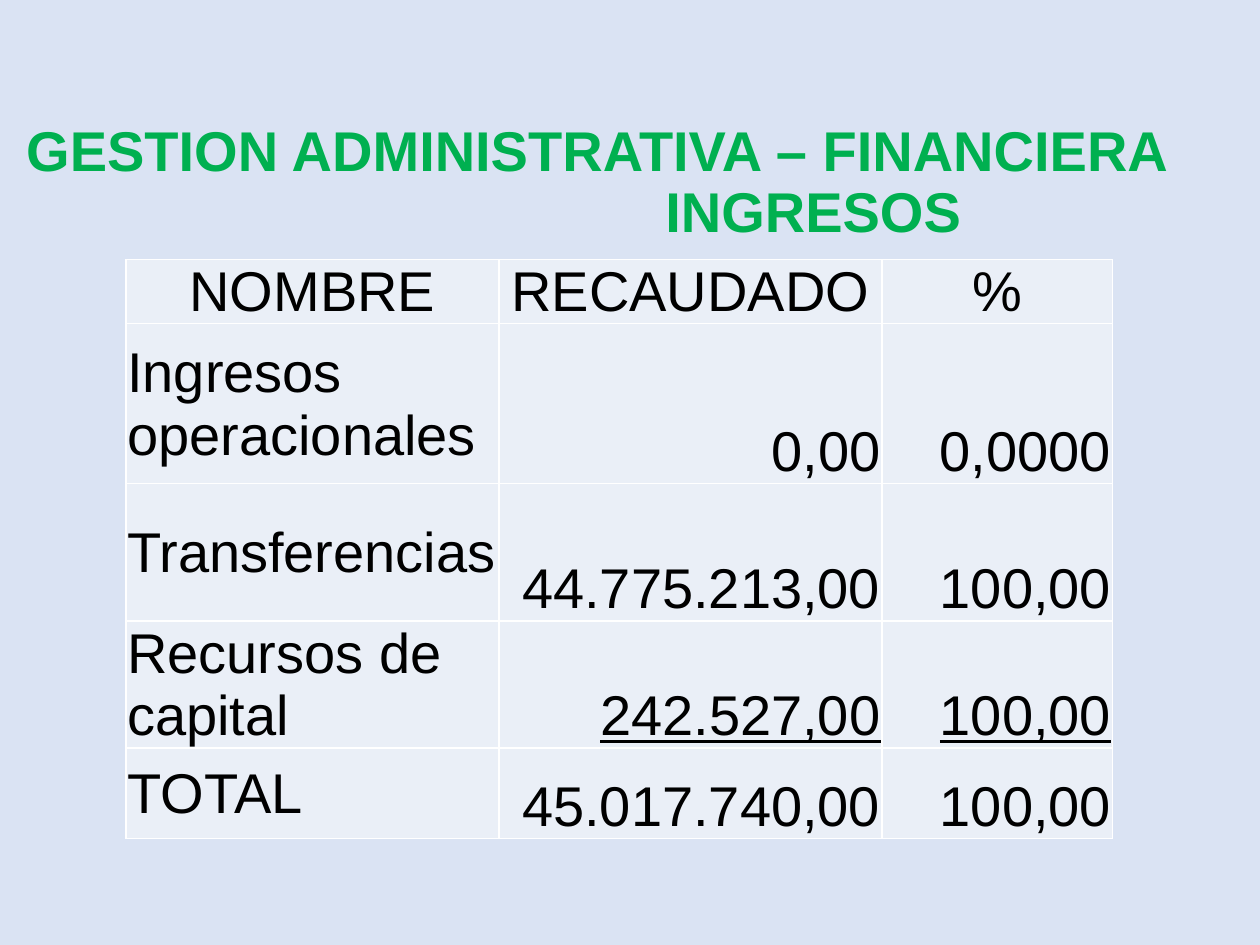
from typing import NamedTuple

from lxml import etree
from pptx import Presentation
from pptx import util as u
from pptx.dml.color import RGBColor
from pptx.enum import text
from pptx.oxml import ns

FONT, SIZE = "Arial", 32
BACKGROUND, GREEN, BLACK = "DAE3F3", "00B050", "000000"
CELL_FILL, BORDER = "EAEFF7", "FFFFFF"
LEFT, CENTER, RIGHT = text.PP_ALIGN.LEFT, text.PP_ALIGN.CENTER, text.PP_ALIGN.RIGHT


class Income(NamedTuple):
    name: str
    collected: str
    percent: str
    height: float
    header: bool = False
    underlined: bool = False


INCOMES = [
    Income("NOMBRE", "RECAUDADO", "%", 0.42, header=True),
    Income("Ingresos operacionales", "0,00", "0,0000", 1.27),
    Income("Transferencias", "44.775.213,00", "100,00", 1.09),
    Income("Recursos de capital", "242.527,00", "100,00", 0.92, underlined=True),
    Income("TOTAL", "45.017.740,00", "100,00", 0.72),
]
COLUMN_WIDTHS = [2.96, 3.04, 1.83]


def paint(fill_or_font_color, color: str) -> None:
    fill_or_font_color.rgb = RGBColor.from_string(color)


def format_runs(paragraph, color: str, bold: bool = False, underline: bool = False) -> None:
    for run in paragraph.runs:
        run.font.name, run.font.size = FONT, u.Pt(SIZE)
        run.font.bold, run.font.underline = bold, underline
        paint(run.font.color, color)


def add_borders(cell, color: str) -> None:
    properties = cell._tc.get_or_add_tcPr()
    for index, side in enumerate(("a:lnL", "a:lnR", "a:lnT", "a:lnB")):
        line = etree.Element(ns.qn(side), w=str(u.Pt(1)))
        solid = etree.SubElement(line, ns.qn("a:solidFill"))
        etree.SubElement(solid, ns.qn("a:srgbClr"), val=color)
        properties.insert(index, line)


def fill_cell(cell, words: str, column: int, income: Income) -> None:
    cell.text_frame.text = words
    cell.margin_left = cell.margin_right = cell.margin_top = u.Inches(0.01)
    cell.margin_bottom = 0
    cell.vertical_anchor = text.MSO_ANCHOR.BOTTOM if column else text.MSO_ANCHOR.MIDDLE
    paragraph = cell.text_frame.paragraphs[0]
    paragraph.alignment = CENTER if income.header else RIGHT if column else LEFT
    format_runs(paragraph, BLACK, underline=income.underlined and column > 0)
    cell.fill.solid()
    paint(cell.fill.fore_color, CELL_FILL)
    add_borders(cell, BORDER)


def add_title(slide) -> None:
    title = slide.shapes.title
    title.left, title.top = u.Inches(0.08), u.Inches(0.67)
    title.width, title.height = u.Inches(9.33), u.Inches(1.58)
    frame = title.text_frame
    frame.text = "GESTION ADMINISTRATIVA – FINANCIERA\nINGRESOS"
    frame.auto_size = text.MSO_AUTO_SIZE.NONE
    frame.vertical_anchor = text.MSO_ANCHOR.MIDDLE
    for paragraph in frame.paragraphs:
        paragraph.alignment, paragraph.line_spacing = CENTER, 0.9
        format_runs(paragraph, GREEN, bold=True)
    # The second line is centred to the right of the first
    frame.paragraphs[1]._p.get_or_add_pPr().set("marL", str(u.Inches(3.42)))


def add_income_table(slide) -> None:
    table = slide.shapes.add_table(
        len(INCOMES), len(COLUMN_WIDTHS), u.Inches(1), u.Inches(2.06),
        u.Inches(sum(COLUMN_WIDTHS)), u.Inches(sum(i.height for i in INCOMES)),
    ).table
    for column, width in zip(table.columns, COLUMN_WIDTHS):
        column.width = u.Inches(width)
    for row, income in zip(table.rows, INCOMES):
        row.height = u.Inches(income.height)
        for column, words in enumerate(income[:3]):
            fill_cell(row.cells[column], words, column, income)


def main() -> None:
    deck = Presentation()
    deck.slide_width, deck.slide_height = u.Inches(10), u.Inches(7.5)
    slide = deck.slides.add_slide(deck.slide_layouts[5])

    # Background
    slide.background.fill.solid()
    paint(slide.background.fill.fore_color, BACKGROUND)

    # Title and table
    add_title(slide)
    add_income_table(slide)
    deck.save("out.pptx")


if __name__ == "__main__":
    main()
